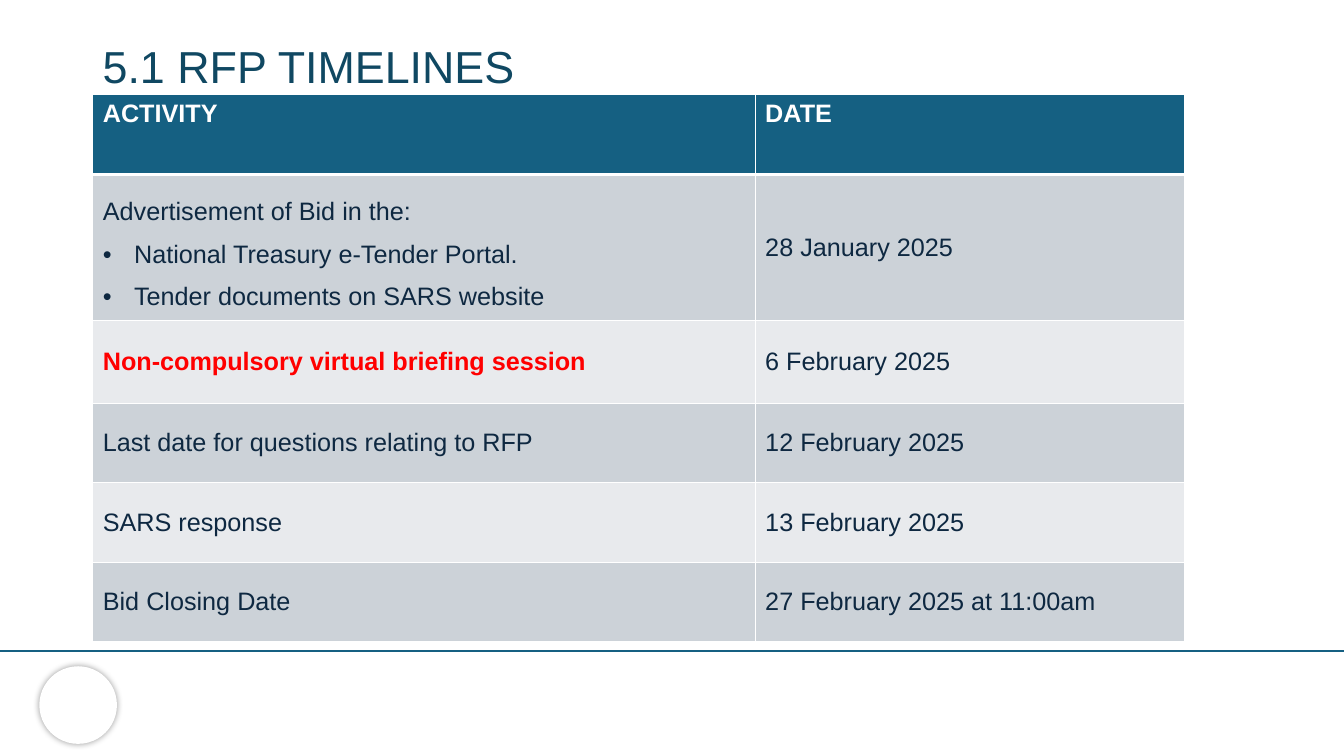
from dataclasses import dataclass

from lxml import etree
from pptx import Presentation
from pptx.dml.color import RGBColor
from pptx.enum.shapes import MSO_CONNECTOR, MSO_SHAPE
from pptx.enum.text import MSO_ANCHOR
from pptx.oxml.ns import qn
from pptx.util import Inches, Pt

STRAIGHT = MSO_CONNECTOR.STRAIGHT
OVAL = MSO_SHAPE.OVAL
TOP, MIDDLE = MSO_ANCHOR.TOP, MSO_ANCHOR.MIDDLE


@dataclass(frozen=True)
class Theme:
    font: str = "Arial"
    title_size: int = 32
    body_size: int = 18
    title: str = "104862"
    accent: str = "156082"
    text: str = "0E2841"
    alert: str = "FF0000"
    white: str = "FFFFFF"
    shadow: str = "000000"
    bands: tuple = ("CCD2D8", "E8EAED")


THEME = Theme()
SLIDE_W, SLIDE_H = 13.33, 7.5
BULLET = "•"
COL_WIDTHS = (6.57, 4.26)
ROW_HEIGHTS = (0.79, 1.34, 0.82, 0.79, 0.79, 0.79)
HEADER = ("ACTIVITY", "DATE")
ALERT_ACTIVITY = "Non-compulsory virtual briefing session"
# A line that starts with the bullet sign becomes a bulleted paragraph
TIMELINE = (
    ("Advertisement of Bid in the:\n"
     "•National Treasury e-Tender Portal.\n"
     "•Tender documents on SARS website", "28 January 2025"),
    (ALERT_ACTIVITY, "6 February 2025"),
    ("Last date for questions relating to RFP", "12 February 2025"),
    ("SARS response", "13 February 2025"),
    ("Bid Closing Date", "27 February 2025 at 11:00am"),
)


def rgb(color):
    return RGBColor.from_string(color)


def sub(parent, tag, **attrs):
    return etree.SubElement(parent, qn(tag), {k: str(v) for k, v in attrs.items()})


def style(p, size, color, bold=False):
    for r in p.runs:
        r.font.name, r.font.size, r.font.bold = THEME.font, Pt(size), bold
        r.font.color.rgb = rgb(color)


def add_bullet(p, indent):
    pPr = p._p.get_or_add_pPr()
    pPr.set("marL", str(Inches(indent)))
    pPr.set("indent", str(-Inches(indent)))
    sub(pPr, "a:buFont", typeface=THEME.font)
    sub(pPr, "a:buChar", char=BULLET)


def add_borders(cell, row):
    """White grid lines, heavier under the header row."""
    tcPr = cell._tc.get_or_add_tcPr()
    widths = {"a:lnL": 1, "a:lnR": 1, "a:lnT": 3 if row == 1 else 1,
              "a:lnB": 3 if row == 0 else 1}
    for tag, width in widths.items():
        ln = sub(tcPr, tag, w=Pt(width))
        sub(sub(ln, "a:solidFill"), "a:srgbClr", val=THEME.white)


def fill_cell(cell, row, text):
    header = row == 0
    alert = text == ALERT_ACTIVITY
    add_borders(cell, row)
    cell.fill.solid()
    cell.fill.fore_color.rgb = rgb(THEME.accent if header else THEME.bands[(row - 1) % 2])
    cell.vertical_anchor = TOP if header else MIDDLE
    color = THEME.white if header else THEME.alert if alert else THEME.text

    lines = text.split("\n")
    tf = cell.text_frame
    for i, line in enumerate(lines):
        p = tf.add_paragraph() if i else tf.paragraphs[0]
        p.text = line.removeprefix(BULLET)
        if len(lines) > 1:
            p.line_spacing = 1.5
        if line.startswith(BULLET):
            add_bullet(p, 0.31)
        style(p, THEME.body_size, color, header or alert)


def add_title(s, x, y, w, h, text):
    tf = s.shapes.add_textbox(Inches(x), Inches(y), Inches(w), Inches(h)).text_frame
    tf.word_wrap = True
    tf.vertical_anchor = TOP
    p = tf.paragraphs[0]
    p.text = text
    p.line_spacing = 0.9
    style(p, THEME.title_size, THEME.title)


def add_timeline(s, x, y, w, h):
    rows = (HEADER,) + TIMELINE
    table = s.shapes.add_table(len(rows), len(HEADER), Inches(x), Inches(y),
                               Inches(w), Inches(h)).table
    for col, width in zip(table.columns, COL_WIDTHS):
        col.width = Inches(width)
    for i, (texts, height) in enumerate(zip(rows, ROW_HEIGHTS)):
        table.rows[i].height = Inches(height)
        for j, text in enumerate(texts):
            fill_cell(table.cell(i, j), i, text)


def add_footer(s, x, y, w, h):
    # Rule across the slide
    rule = s.shapes.add_connector(STRAIGHT, Inches(x + w), Inches(y), Inches(x), Inches(y))
    rule.line.color.rgb = rgb(THEME.accent)
    rule.line.width = Pt(1.5)
    sub(rule._element.spPr, "a:effectLst")

    # Round badge with a soft shadow
    size = 0.77
    badge = s.shapes.add_shape(OVAL, Inches(x + 0.39), Inches(y + h - size - 0.12),
                               Inches(size), Inches(size))
    badge.fill.solid()
    badge.fill.fore_color.rgb = rgb(THEME.white)
    badge.line.fill.background()
    badge.shadow.inherit = False
    effects = badge._element.spPr.find(qn("a:effectLst"))
    shadow = sub(effects, "a:outerShdw", blurRad=Pt(5), dist=0, dir=0,
                 algn="ctr", rotWithShape=0)
    sub(sub(shadow, "a:srgbClr", val=THEME.shadow), "a:alpha", val=40000)


def main():
    prs = Presentation()
    prs.slide_width, prs.slide_height = Inches(SLIDE_W), Inches(SLIDE_H)
    s = prs.slides.add_slide(prs.slide_layouts[6])
    add_footer(s, 0, 6.46, SLIDE_W, SLIDE_H - 6.46)
    add_title(s, 0.92, 0.4, 12.3, 0.83, "5.1 RFP TIMELINES")
    add_timeline(s, 0.92, 0.94, sum(COL_WIDTHS), sum(ROW_HEIGHTS))
    prs.save("out.pptx")


if __name__ == "__main__":
    main()
